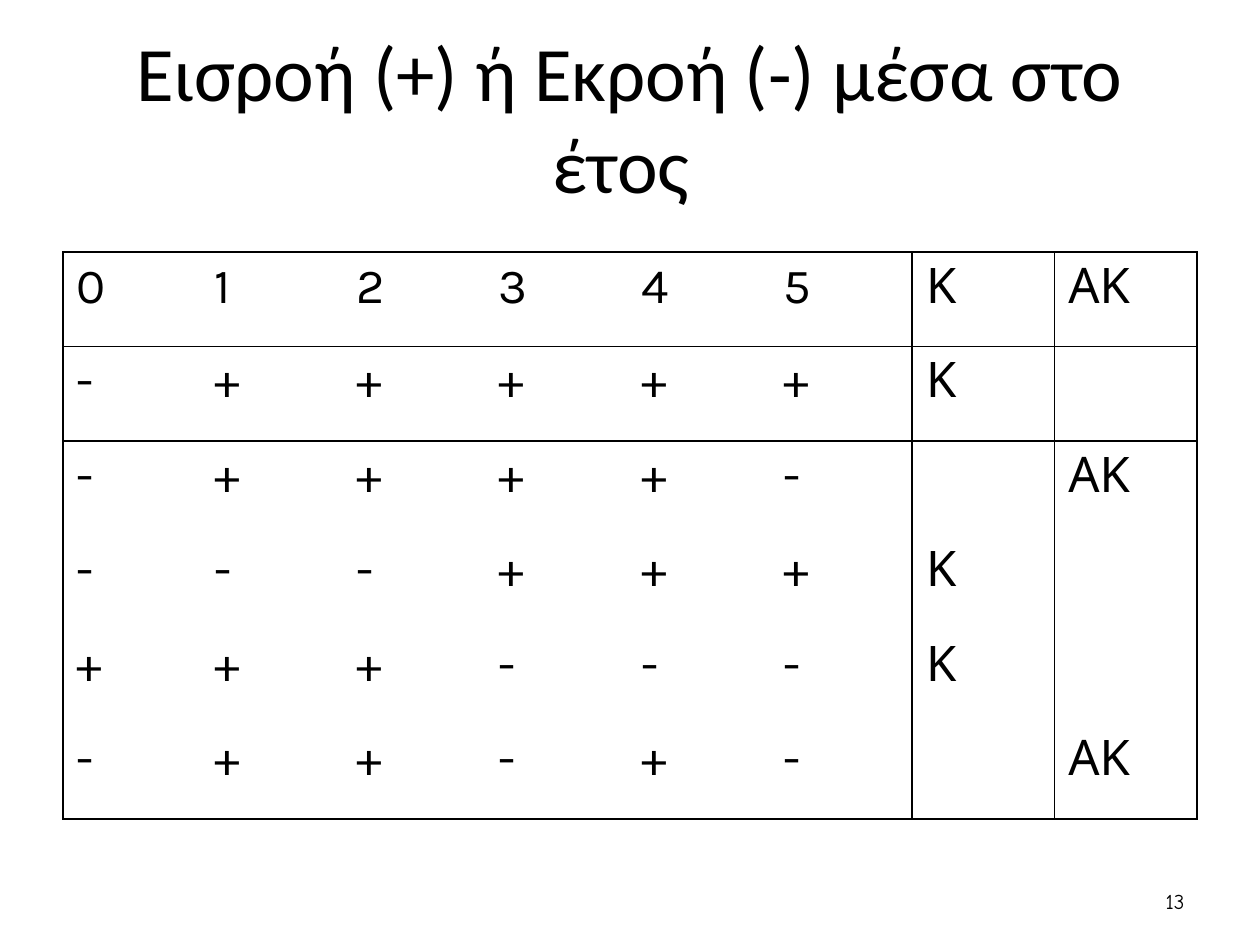
from dataclasses import dataclass

from lxml import etree
from pptx import Presentation
from pptx import util as u
from pptx.dml.color import RGBColor
from pptx.enum import text
from pptx.oxml import ns


@dataclass(frozen=True)
class Theme:
    ink: str = "000000"
    paper: str = "FFFFFF"
    title_font: str = "Calibri"
    table_font: str = "Karla"
    number_font: str = "Comic Neue"
    title_size: int = 44
    table_size: int = 28
    number_size: int = 12
    rule_width: float = 1


THEME = Theme()
NO_STYLE = "{2D5ABB26-0587-4C30-8999-92F81FD0307C}"
YEARS = 6  # the first six columns are years, the last two are verdicts

CASH_FLOWS = [
    ["0", "1", "2", "3", "4", "5", "Κ", "ΑΚ"],
    ["-", "+", "+", "+", "+", "+", "Κ", ""],
    ["-", "+", "+", "+", "+", "-", "", "ΑΚ"],
    ["-", "-", "-", "+", "+", "+", "Κ", ""],
    ["+", "+", "+", "-", "-", "-", "Κ", ""],
    ["-", "+", "+", "-", "+", "-", "", "ΑΚ"],
]


def write(frame, words, font, size, align=text.PP_ALIGN.LEFT):
    """Put one formatted paragraph in a text frame."""
    paragraph = frame.paragraphs[0]
    paragraph.alignment = align
    paragraph.font.size = u.Pt(size)
    run = paragraph.add_run()
    run.text = words
    run.font.name = font
    run.font.size = u.Pt(size)
    run.font.color.rgb = RGBColor.from_string(THEME.ink)


def add_label(slide, words, left, top, width, height, **style):
    box = slide.shapes.add_textbox(*map(u.Inches, (left, top, width, height)))
    frame = box.text_frame
    frame.word_wrap = True
    frame.vertical_anchor = text.MSO_ANCHOR.MIDDLE
    write(frame, words, **style)


def rule_cell(cell, sides):
    """Draw the given sides of a cell, in the order L, R, T, B."""
    properties = cell._tc.get_or_add_tcPr()
    for side in sides:
        line = etree.SubElement(properties, ns.qn(f"a:ln{side}"),
                                w=str(u.Pt(THEME.rule_width)))
        fill = etree.SubElement(line, ns.qn("a:solidFill"))
        etree.SubElement(fill, ns.qn("a:srgbClr"), val=THEME.ink)


def cell_sides(row, column):
    """Rules frame the table, its header row and its block of years."""
    last_row = len(CASH_FLOWS) - 1
    last_column = len(CASH_FLOWS[0]) - 1
    drawn = {
        "L": column in (0, YEARS),
        "R": column in (YEARS - 1, last_column),
        "T": row in (0, 1),
        "B": row in (0, last_row),
    }
    return [side for side, visible in drawn.items() if visible]


def add_flow_table(slide):
    rows, columns = len(CASH_FLOWS), len(CASH_FLOWS[0])
    flows = slide.shapes.add_table(
        rows, columns, *map(u.Inches, (0.5, 2, 9, 4.5))).table
    flows.first_row = flows.horz_banding = False
    flows._tbl.tblPr.find(ns.qn("a:tableStyleId")).text = NO_STYLE

    for index, column in enumerate(flows.columns):
        column.width = u.Inches(1.13 if index else 1.09)
    for row, signs in enumerate(CASH_FLOWS):
        flows.rows[row].height = u.Inches(0.75)
        for column, sign in enumerate(signs):
            cell = flows.cell(row, column)
            cell.margin_left = cell.margin_right = u.Inches(0.11)
            cell.margin_top = cell.margin_bottom = u.Inches(0.05)
            rule_cell(cell, cell_sides(row, column))
            cell.fill.background()
            if sign:
                write(cell.text_frame, sign, THEME.table_font, THEME.table_size)


def main():
    deck = Presentation()
    deck.slide_width, deck.slide_height = u.Inches(10), u.Inches(7.5)
    slide = deck.slides.add_slide(deck.slide_layouts[6])
    slide.background.fill.solid()
    slide.background.fill.fore_color.rgb = RGBColor.from_string(THEME.paper)

    # Title
    add_label(slide, "Εισροή (+) ή Εκροή (-) μέσα στο έτος ", 0.5, 0.3, 9, 1.25,
              font=THEME.title_font, size=THEME.title_size,
              align=text.PP_ALIGN.CENTER)

    # Signs of the flows by year, with their verdicts
    add_flow_table(slide)

    # Page number
    add_label(slide, "13", 7.17, 6.95, 2.33, 0.4,
              font=THEME.number_font, size=THEME.number_size,
              align=text.PP_ALIGN.RIGHT)

    deck.save("out.pptx")


if __name__ == "__main__":
    main()
